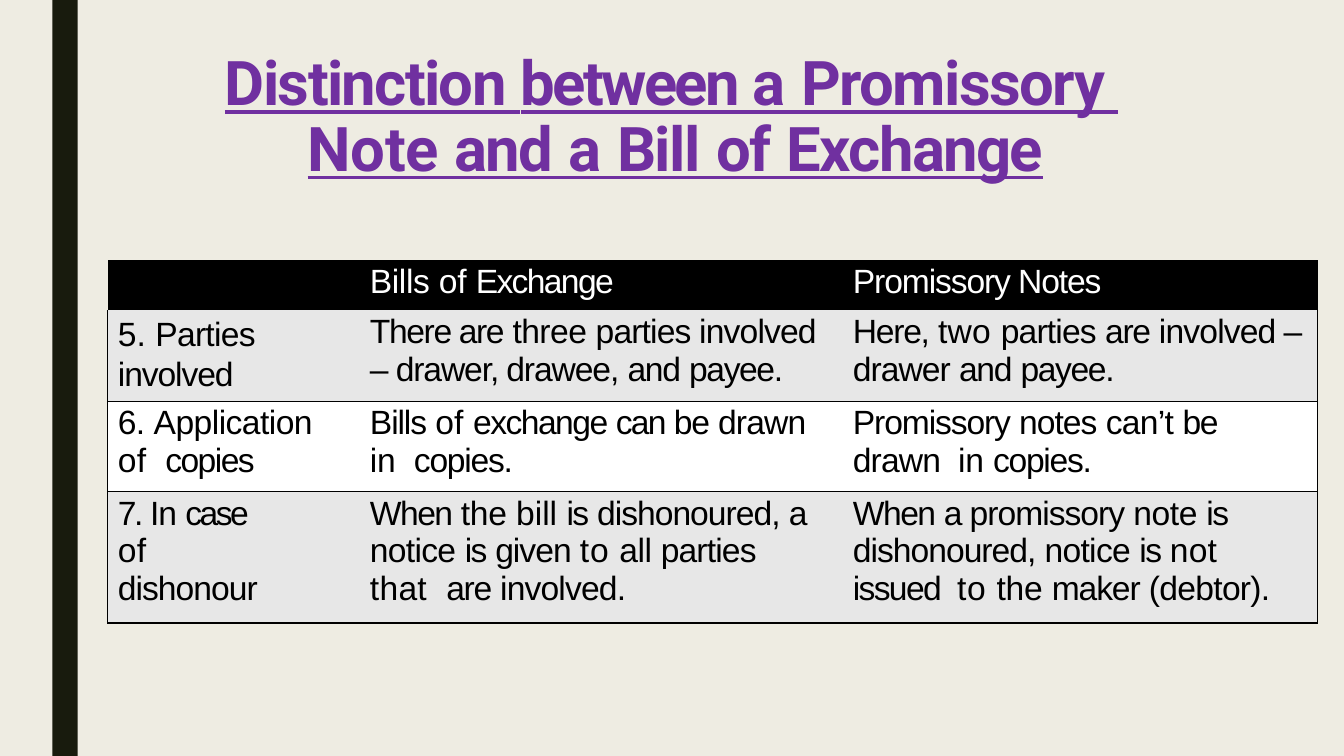
import pptx
import pptx.util
import pptx.dml.color
import pptx.enum.shapes
import pptx.enum.text
import pptx.oxml
from pptx.util import Inches, Pt

NS = 'xmlns:a="http://schemas.openxmlformats.org/drawingml/2006/main"'
PLAIN = "{2D5ABB26-0587-4C30-8999-92F81FD0307C}"

# Each text run is followed by its letter spacing in points.
TITLE = ("Distinction |-1.2|between |-1.9|a|-0.8| |-10.3|Promissory  |-1.1|Note|-0.3"
         "| |-4.2|and|-1.1| |-4.3|a|-0.8| |-4.2|Bill|-1.2| |-4.2|of|-1.2| |-4.2"
         "|Exchange|-1.2")
HEAD = [[], ["Bills |-0.3|of |-0.1|Exchange|-1.2"], ["Promissory Notes|-0.8"]]
BODY = [
    [["5. |0|Parties|-0.5", "involved|-0.8"],
     ["There are |-1|three |-0.4|parties involved|-0.6",
      "– |-1.6|drawer, drawee, |-0.8|and |-0.9|payee.|-1"],
     ["Here, |-0.9|two |0.2|parties |-0.6|are |-1|involved|-0.6| –|-1.6",
      "drawer |-0.7|and |-0.9|payee.|-1"]],
    [["6. |-0.6|Application |-0.4|of  |0.1|copies|-1.1"],
     ["Bills |-0.8|of |0.1|exchange |-1.1|can |-1.3|be |-0.9|drawn |-0.6"
      "|in  |-0.2|copies.|-0.9"],
     ["Promissory |-0.8|notes |-0.7|can’t |-0.5|be |-1|drawn  |-0.6|in |-0.2"
      "|copies.|-0.9"]],
    [["7. |-1.8|In |-0.8|case |-1.8|of  |0.1|dishonour|-0.7"],
     ["When |-1.1|the |-0.2|bill |0|is |-1.1|dishonoured, |-0.7|a  |-1.6"
      "|notice |-0.5|is |-1.1|given |-0.7|to |0.5|all |-0.4|parties |-0.6"
      "|that  |0.2|are |-1|involved.|-0.6"],
     ["When |-1.1|a |-1.6|promissory |-0.7|note |-0.3|is  |-1.1"
      "|dishonoured, |-0.7|notice |-0.5|is |-1.1|not |0.1|issued  |-1.2"
      "|to |0.5|the |-0.2|maker |-0.8|(debtor).|-0.5"]],
]
COLS = [2.47, 4.78, 4.75]
ROWS = [0.5, 0.9, 0.9, 1.3]
LEFT = [0.1, 0.13, 0.14]
RIGHT = [[0, 0, 0], [0, 0, 0], [0.3, 0.2, 0.4], [0.9, 0.2, 0.4]]


def color(code):
    return pptx.dml.color.RGBColor.from_string(code)


class Page:
    ink, paper, dark, accent = "000000", "EEECE2", "181B0D", "7030A0"
    bands = ["E7E7E7", "FFFFFF"]

    def __init__(self, deck):
        self.slide = deck.slides.add_slide(deck.slide_layouts[5])
        fill = self.slide.background.fill
        fill.solid()
        fill.fore_color.rgb = color(self.paper)

    def bar(self, x, y, w, h):
        kind = pptx.enum.shapes.MSO_SHAPE.RECTANGLE
        shape = self.slide.shapes.add_shape(kind, *map(Inches, (x, y, w, h)))
        shape.shadow.inherit = False
        shape.fill.solid()
        shape.fill.fore_color.rgb = color(self.dark)
        shape.line.fill.background()

    def text(self, para, text, font, size, tint):
        """Fill a paragraph from runs that alternate with their spacing."""
        para.alignment = pptx.enum.text.PP_ALIGN.LEFT
        para.font.name, para.font.size = font, Pt(size)
        para.font.color.rgb = color(tint)
        parts = text.split("|")
        for words, gap in zip(parts[::2], parts[1::2]):
            run = para.add_run()
            run.text = words
            run._r.get_or_add_rPr().set("spc", str(round(float(gap) * 100)))

    def title(self, text, x, y, w, h):
        shape = self.slide.shapes.title
        shape.left, shape.top, shape.width, shape.height = map(Inches, (x, y, w, h))
        frame = shape.text_frame
        frame.word_wrap = True
        frame.auto_size = pptx.enum.text.MSO_AUTO_SIZE.NONE
        frame.vertical_anchor = pptx.enum.text.MSO_ANCHOR.TOP
        frame.margin_left = frame.margin_right = frame.margin_bottom = 0
        frame.margin_top = Inches(0.1)
        para = frame.paragraphs[0]
        self.text(para, text, "Roboto", 44, self.accent)
        para.font.bold = para.font.underline = True
        para.line_spacing, para.space_before = Pt(46.9), Pt(7.5)
        props = para._p.get_or_add_pPr()
        props.set("marL", str(Inches(0.83)))
        props.set("indent", str(Inches(-0.82)))

    def edge(self, cell, sides):
        props = cell._tc.get_or_add_tcPr()
        for spot, side in enumerate(sides):
            props.insert(spot, pptx.oxml.parse_xml(
                f'<a:ln{side} {NS} w="{Pt(1)}"><a:solidFill>'
                f'<a:srgbClr val="{self.ink}"/></a:solidFill></a:ln{side}>'))

    def cell(self, cell, lines, row, col):
        cell.fill.solid()
        fill = self.bands[(row - 1) % 2] if row else self.ink
        cell.fill.fore_color.rgb = color(fill)
        cell.margin_left, cell.margin_right = Inches(LEFT[col]), Inches(RIGHT[row][col])
        cell.margin_top, cell.margin_bottom = Inches(0.03), 0
        frame = cell.text_frame
        for spot, text in enumerate(lines):
            para = frame.add_paragraph() if spot else frame.paragraphs[0]
            self.text(para, text, "Arial", 24, self.ink if row else "FFFFFF")
            para.space_before = Pt(0 if spot else 2.1)
            if row == 1 and col == 0:
                para.line_spacing = Pt(28.5)
        if row:
            sides = {0: "L", 2: "R"}.get(col, "")
            self.edge(cell, sides + ("TB" if row > 1 else "B"))

    def table(self, data, x, y):
        size = map(Inches, (x, y, sum(COLS), sum(ROWS)))
        table = self.slide.shapes.add_table(len(ROWS), len(COLS), *size).table
        table._tbl.tblPr[0].text = PLAIN
        for col, width in zip(table.columns, COLS):
            col.width = Inches(width)
        for row, high in zip(table.rows, ROWS):
            row.height = Inches(high)
        for r, line in enumerate(data):
            for c, lines in enumerate(line):
                self.cell(table.cell(r, c), lines, r, c)


def main():
    deck = pptx.Presentation()
    deck.slide_width, deck.slide_height = Inches(13.33), Inches(7.5)
    page = Page(deck)
    page.bar(0.52, 0, 0.25, 7.5)
    page.title(TITLE, 2.22, 0.42, 8.89, 1.41)
    page.table([HEAD] + BODY, 1.07, 2.58)
    deck.save("out.pptx")


if __name__ == "__main__":
    main()
